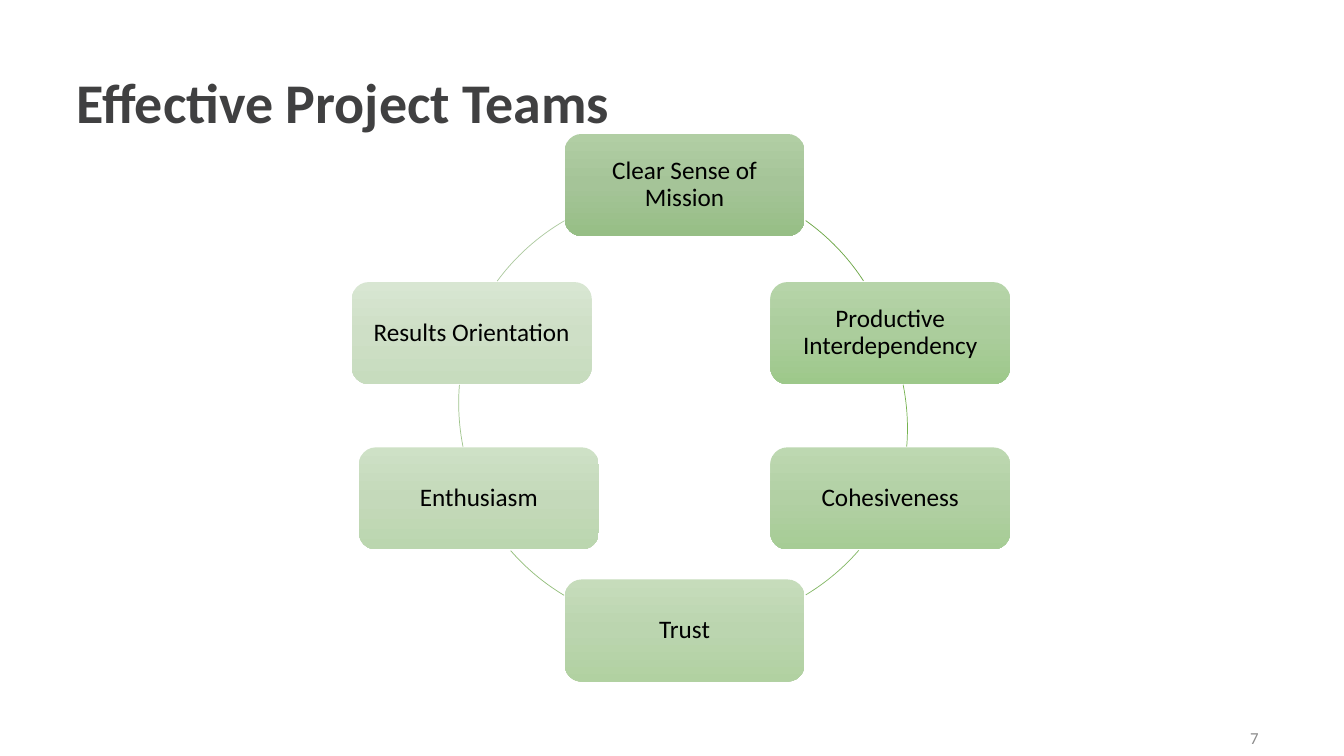
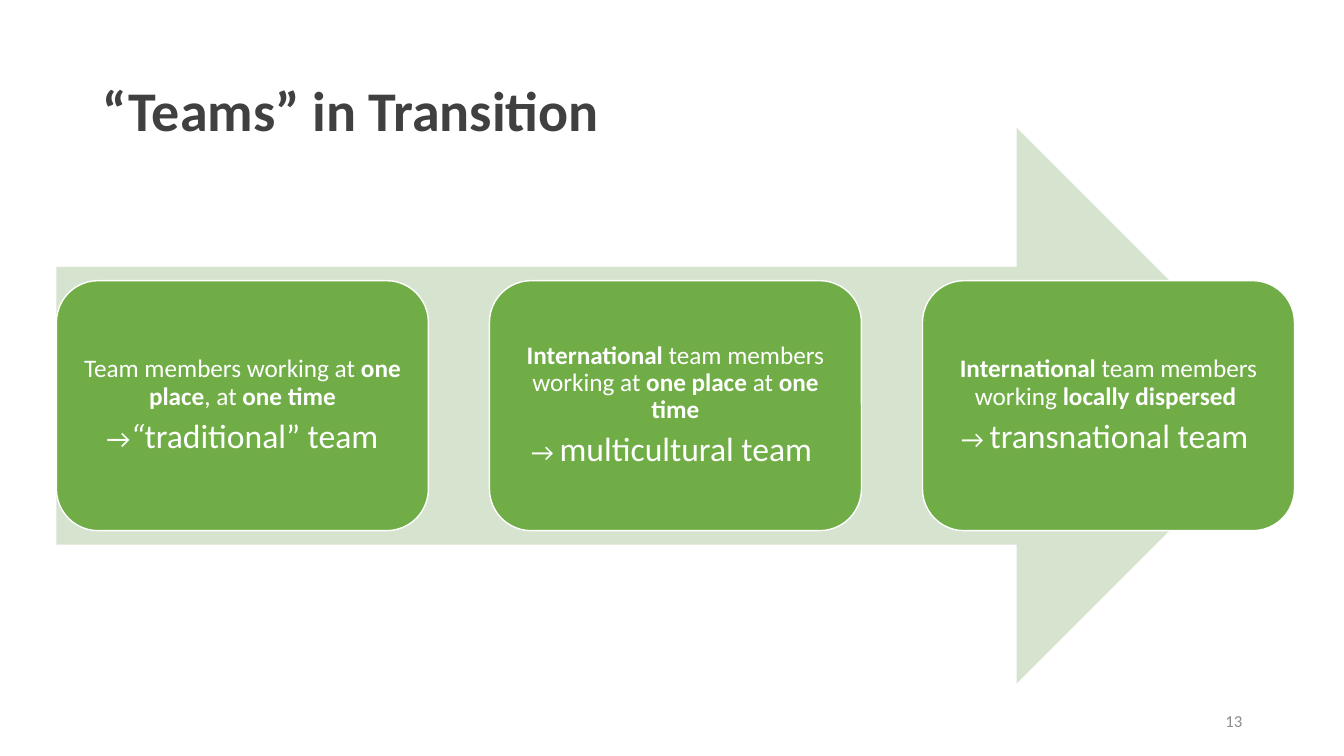
import copy
from dataclasses import dataclass

import pptx
import pptx.dml.color
import pptx.enum.shapes
import pptx.enum.text
import pptx.oxml.ns
import pptx.util

SHAPES = pptx.enum.shapes.MSO_SHAPE
ALIGN = pptx.enum.text.PP_ALIGN
MIDDLE = pptx.enum.text.MSO_ANCHOR.MIDDLE
WIDTH = pptx.util.Inches(13.33)
HEIGHT = pptx.util.Inches(7.5)


@dataclass(frozen=True)
class Theme:
    font: str = "Calibri"
    title: str = "404041"
    number: str = "8C8C8C"
    dark: str = "000000"
    light: str = "FFFFFF"
    card: str = "70AD47"
    arrow: str = "D5E3CF"
    title_size: int = 40
    body_size: int = 18
    mark_size: int = 19
    key_size: int = 24
    number_size: int = 12
    line_spacing: float = 0.9
    paragraph_gap: int = 6
    card_inset: float = 0.07


THEME = Theme()


@dataclass(frozen=True)
class Span:
    text: str
    size: int = THEME.body_size
    bold: bool = False
    italic: bool = False


# Cycle, clockwise from the top: label, centre (% of slide), gradient colours
CYCLE_CARDS = [
    ("Clear Sense of Mission", (50.94, 24.47), ("B1CEA4", "A5C498", "96BE85")),
    ("Productive Interdependency", (66.24, 44.07), ("B6D4A9", "ABCD9C", "9DC88A")),
    ("Cohesiveness", (66.24, 65.93), ("BDD8B1", "B2D0A4", "A6CC95")),
    ("Trust", (50.94, 83.4), ("C6DCBB", "BBD5AF", "B1D1A1")),
    ("Enthusiasm", (35.63, 65.93), ("CEE1C6", "C4D9BA", "BBD6AF")),
    ("Results Orientation", (35.1, 44.07), ("D8E6D2", "CEDFC6", "C7DCBE")),
]
CYCLE_CARD_SIZE = (17.85, 13.5)

# Links between cards: circle centre (% of slide), start and end degrees, colour
CYCLE_ARCS = [
    ((50.34, 53.2), 305.4, 327, "6BA544"),
    ((50.94, 56.67), 348.7, 4.7, "76B350"),
    ((51.39, 53.47), 41, 58.9, "83B865"),
    ((50.49, 53.47), 120.9, 138.9, "91BD79"),
    ((50.71, 53.33), 168.7, 184.7, "9FC48C"),
    ((50.34, 54.67), 216.4, 239.8, "ADCA9F"),
]
CYCLE_CIRCLE_SIZE = (33.16, 58.93)

# Stages of transition: a description and the resulting kind of team
STAGES = [
    [
        [Span("Team members working at "), Span("one place", bold=True),
         Span(", at "), Span("one time", bold=True)],
        [Span("→", THEME.mark_size), Span("“", THEME.key_size, italic=True),
         Span("traditional” team", THEME.key_size)],
    ],
    [
        [Span("International", bold=True), Span(" team members working at "),
         Span("one place ", bold=True), Span("at "), Span("one time", bold=True)],
        [Span("→ "), Span("multicultural team ", THEME.key_size)],
    ],
    [
        [Span("International", bold=True), Span(" team members working "),
         Span("locally dispersed ", bold=True)],
        [Span("→ "), Span("transnational team ", THEME.key_size)],
    ],
]
ARROW_AREA = (4.2, 16.93, 92.12, 73.47)
STAGE_SIZE = (27.68, 33.07)


# Geometry and colour
def place(left, top, width, height):
    """Turn percentages of the slide into lengths."""
    return (round(WIDTH * left / 100), round(HEIGHT * top / 100),
            round(WIDTH * width / 100), round(HEIGHT * height / 100))


def centred(centre, size):
    return (centre[0] - size[0] / 2, centre[1] - size[1] / 2, *size)


def rgb(value):
    return pptx.dml.color.RGBColor.from_string(value)


# Text
def write(frame, paragraphs, color, align, spacing=THEME.line_spacing):
    frame.word_wrap = True
    frame.vertical_anchor = MIDDLE
    for index, spans in enumerate(paragraphs):
        para = frame.add_paragraph() if index else frame.paragraphs[0]
        para.alignment = align
        para.line_spacing = spacing
        if index:
            para.space_before = pptx.util.Pt(THEME.paragraph_gap)
        for span in spans:
            run = para.add_run()
            run.text = span.text
            run.font.name = THEME.font
            run.font.size = pptx.util.Pt(span.size)
            run.font.bold = span.bold
            run.font.italic = span.italic
            run.font.color.rgb = rgb(color)


def add_title(page, text, area):
    box = page.shapes.add_textbox(*place(*area))
    write(box.text_frame, [[Span(text, THEME.title_size, bold=True)]],
          THEME.title, ALIGN.LEFT)


def add_number(page, number, left, top):
    box = page.shapes.add_textbox(*place(left, top, 22.51, 5.33))
    write(box.text_frame, [[Span(str(number), THEME.number_size)]],
          THEME.number, ALIGN.RIGHT, 1.0)


# Shapes
def add_plain(page, kind, area):
    shape = page.shapes.add_shape(kind, *place(*area))
    shape.shadow.inherit = False
    shape.line.fill.background()
    return shape


def add_card(page, area, paragraphs, color):
    card = add_plain(page, SHAPES.ROUNDED_RECTANGLE, area)
    frame = card.text_frame
    inset = pptx.util.Inches(THEME.card_inset)
    frame.margin_left = frame.margin_right = inset
    frame.margin_top = frame.margin_bottom = inset
    write(frame, paragraphs, color, ALIGN.CENTER)
    return card


def shade(shape, colors):
    """Fill from top to bottom with three evenly spaced colours."""
    shape.fill.gradient()
    shape.fill.gradient_angle = 270
    stops = shape._element.spPr.find(".//" + pptx.oxml.ns.qn("a:gsLst"))
    stops.insert(1, copy.deepcopy(stops[0]))
    for index, stop in enumerate(shape.fill.gradient_stops):
        stop.position = index / 2
        stop.color.rgb = rgb(colors[index])


def outline(shape, color, width):
    shape.line.color.rgb = rgb(color)
    shape.line.width = pptx.util.Pt(width)


def add_arc(page, centre, start, end, color):
    arc = add_plain(page, SHAPES.ARC, centred(centre, CYCLE_CIRCLE_SIZE))
    # One degree is 60000 units and an adjustment of 1 is 100000
    arc.adjustments[0] = start * 0.6
    arc.adjustments[1] = end * 0.6
    arc.fill.background()
    outline(arc, color, 0.5)


# Slides
def new_page(deck):
    page = deck.slides.add_slide(deck.slide_layouts[6])
    page.background.fill.solid()
    page.background.fill.fore_color.rgb = rgb(THEME.light)
    return page


def build_cycle(deck):
    page = new_page(deck)
    add_title(page, "Effective Project Teams", (4.95, 5.6, 67.52, 16.67))
    for arc in CYCLE_ARCS:
        add_arc(page, *arc)
    for label, centre, colors in CYCLE_CARDS:
        area = centred(centre, CYCLE_CARD_SIZE)
        shade(add_card(page, area, [[Span(label)]], THEME.dark), colors)
    add_number(page, 7, 71.87, 94.93)


def build_transition(deck):
    page = new_page(deck)
    add_title(page, "“Teams” in Transition", (6.9, 5.33, 86.27, 19.33))

    arrow = add_plain(page, SHAPES.RIGHT_ARROW, ARROW_AREA)
    arrow.fill.solid()
    arrow.fill.fore_color.rgb = rgb(THEME.arrow)

    # Cards spread evenly over the arrow's length
    left, top, width, height = ARROW_AREA
    step = (width - STAGE_SIZE[0]) / (len(STAGES) - 1)
    card_top = top + (height - STAGE_SIZE[1]) / 2
    for index, paragraphs in enumerate(STAGES):
        area = (left + index * step, card_top, *STAGE_SIZE)
        card = add_card(page, area, paragraphs, THEME.light)
        card.fill.solid()
        card.fill.fore_color.rgb = rgb(THEME.card)
        outline(card, THEME.light, 1)
    add_number(page, 13, 70.67, 92.67)


def main():
    deck = pptx.Presentation()
    deck.slide_width = WIDTH
    deck.slide_height = HEIGHT
    build_cycle(deck)
    build_transition(deck)
    deck.save("out.pptx")


if __name__ == "__main__":
    main()
